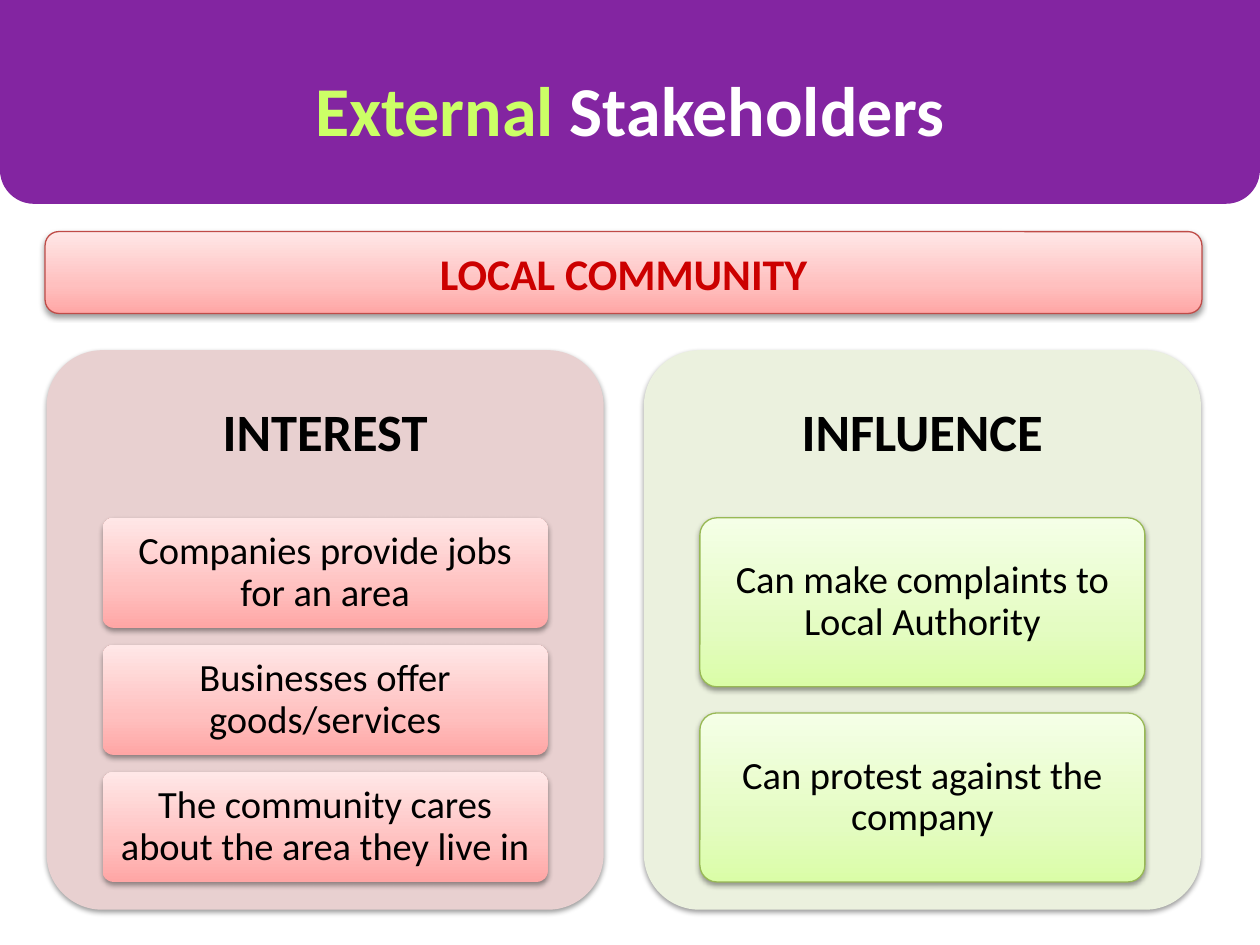
"""Build the External Stakeholders slide about the local community."""
from dataclasses import dataclass
from typing import Optional

from lxml.etree import SubElement
from pptx import Presentation
from pptx.dml.color import RGBColor
from pptx.enum.shapes import MSO_SHAPE
from pptx.enum.text import MSO_ANCHOR, MSO_AUTO_SIZE, PP_ALIGN
from pptx.oxml.ns import qn
from pptx.util import Cm, Pt

COLOURS = {
    "purple": "8325A1", "lime": "CCFF66", "white": "FFFFFF", "black": "000000",
    "red": "CC0000", "red line": "BF4C48", "green line": "98B955",
    "pink panel": "E8D0D0", "green panel": "EBF1DE",
}
GRADIENTS = {
    "pink": {0: "FFA6A5", 35: "FFC0BF", 100: "FFE7E7"},
    "green": {0: "DAFDA7", 35: "E4FCC2", 100: "F5FFE7"},
}
TITLE_FONT = {"name": "Calibri", "size": Pt(40), "bold": True}
BANNER_FONT = {"name": "Calibri", "size": Pt(25), "bold": True}
HEADING_FONT = {"name": "Calibri", "size": Pt(30), "bold": True}
CARD_FONT = {"name": "Calibri", "size": Pt(22), "bold": False}

PANEL_TOP, PANEL_WIDTH, PANEL_HEIGHT = 7.06, 11.23, 11.28
HEADING_HEIGHT = 3.38
CARD_INSET, CARD_AREA, GAP_RATIO = 1.13, 7.34, 0.155


@dataclass
class Panel:
    """A column of cards under a heading."""
    left: float
    heading: str
    fill: str
    gradient: str
    line: Optional[str]
    cards: list[str]


PANELS = [
    Panel(0.94, "INTEREST", "pink panel", "pink", None,
          ["Companies provide jobs for an area", "Businesses offer goods/services",
           "The community cares about the area they live in"]),
    Panel(12.98, "INFLUENCE", "green panel", "green", "green line",
          ["Can make complaints to Local Authority", "Can protest against the company"]),
]


def colour(name: str) -> RGBColor:
    """Look up a named colour."""
    return RGBColor.from_string(COLOURS[name])


def add_span(para, text: str, font: dict, name: str) -> None:
    """Add a formatted run."""
    span = para.add_run()
    span.text = text
    for key, value in font.items():
        setattr(span.font, key, value)
    span.font.color.rgb = colour(name)


def write(box, text: str, font: dict, name: str = "black",
          insets: tuple[float, float] = (0.25, 0.13), spacing: float = 0.9) -> None:
    """Write one centred paragraph in a box."""
    frame = box.text_frame
    across, down = map(Cm, insets)
    settings = {"word_wrap": True, "vertical_anchor": MSO_ANCHOR.MIDDLE,
                "margin_left": across, "margin_right": across,
                "margin_top": down, "margin_bottom": down}
    for key, value in settings.items():
        setattr(frame, key, value)
    para = frame.paragraphs[0]
    para.alignment = PP_ALIGN.CENTER
    para.line_spacing = spacing
    add_span(para, text, font, name)


def add_box(page, place: tuple, fill: str, line: Optional[str] = None,
            corner: float = 0.1, shadow: bool = True):
    """Add a rounded box, or a square one when the corner is zero."""
    kind = MSO_SHAPE.ROUNDED_RECTANGLE if corner else MSO_SHAPE.RECTANGLE
    box = page.shapes.add_shape(kind, *map(Cm, place))
    if corner:
        box.adjustments[0] = corner
    if fill in GRADIENTS:
        paint_gradient(box, GRADIENTS[fill])
    else:
        box.fill.solid()
        box.fill.fore_color.rgb = colour(fill)
    if line:
        box.line.color.rgb = colour(line)
        box.line.width = Pt(0.75)
    else:
        box.line.fill.background()
    box.shadow.inherit = False
    if shadow:
        cast_shadow(box)
    return box


def paint_gradient(box, stops: dict[int, str]) -> None:
    """Fill a box with a gradient that runs from bottom to top."""
    box.fill.gradient()
    box.fill.gradient_angle = 90
    stop_list = box.element.spPr.find(qn("a:gradFill")).find(qn("a:gsLst"))
    for old in list(stop_list):
        stop_list.remove(old)
    for position, value in stops.items():
        stop = SubElement(stop_list, qn("a:gs"), pos=str(position * 1000))
        SubElement(stop, qn("a:srgbClr"), val=value)


def cast_shadow(box) -> None:
    """Give a box a soft shadow below it."""
    effects = box.element.spPr.find(qn("a:effectLst"))
    shade = SubElement(effects, qn("a:outerShdw"), blurRad=str(Pt(3.1)),
                       dist=str(Pt(1.6)), dir="5400000", rotWithShape="0")
    tint = SubElement(shade, qn("a:srgbClr"), val=COLOURS["black"])
    SubElement(tint, qn("a:alpha"), val="38000")


def draw_panel(page, panel: Panel) -> None:
    """Draw a panel with its heading and evenly spaced cards."""
    add_box(page, (panel.left, PANEL_TOP, PANEL_WIDTH, PANEL_HEIGHT), panel.fill)
    heading = page.shapes.add_textbox(
        *map(Cm, (panel.left, PANEL_TOP, PANEL_WIDTH, HEADING_HEIGHT)))
    write(heading, panel.heading, HEADING_FONT, insets=(0.3, 0.3))
    count = len(panel.cards)
    height = CARD_AREA / (count + GAP_RATIO * (count - 1))
    for index, text in enumerate(panel.cards):
        top = PANEL_TOP + HEADING_HEIGHT + index * height * (1 + GAP_RATIO)
        place = (panel.left + CARD_INSET, top, PANEL_WIDTH - 2 * CARD_INSET, height)
        card = add_box(page, place, panel.gradient, panel.line)
        write(card, text, CARD_FONT, insets=(0.15, 0.13))


def draw_title(page) -> None:
    """Draw the purple band and set the title on top of it."""
    add_box(page, (0, 0, 25.4, 4.11), "purple", corner=0.167, shadow=False)
    add_box(page, (0, 0, 25.4, 2.92), "purple", corner=0, shadow=False)
    title = page.shapes.title
    title.left, title.top, title.width, title.height = map(Cm, (0, 1.2, 25.4, 1.96))
    title.text_frame.auto_size = MSO_AUTO_SIZE.NONE
    write(title, "External ", TITLE_FONT, "lime", spacing=1.0)
    add_span(title.text_frame.paragraphs[0], "Stakeholders", TITLE_FONT, "white")
    page.shapes.element.append(title.element)


def main() -> None:
    """Build and save the deck."""
    deck = Presentation()
    deck.slide_width, deck.slide_height = Cm(25.4), Cm(19.05)
    page = deck.slides.add_slide(deck.slide_layouts[5])
    banner = add_box(page, (0.91, 4.67, 23.32, 1.65), "pink", "red line", corner=0.167)
    write(banner, "LOCAL COMMUNITY", BANNER_FONT, "red", spacing=1.0)
    for panel in PANELS:
        draw_panel(page, panel)
    draw_title(page)
    deck.save("out.pptx")


if __name__ == "__main__":
    main()
